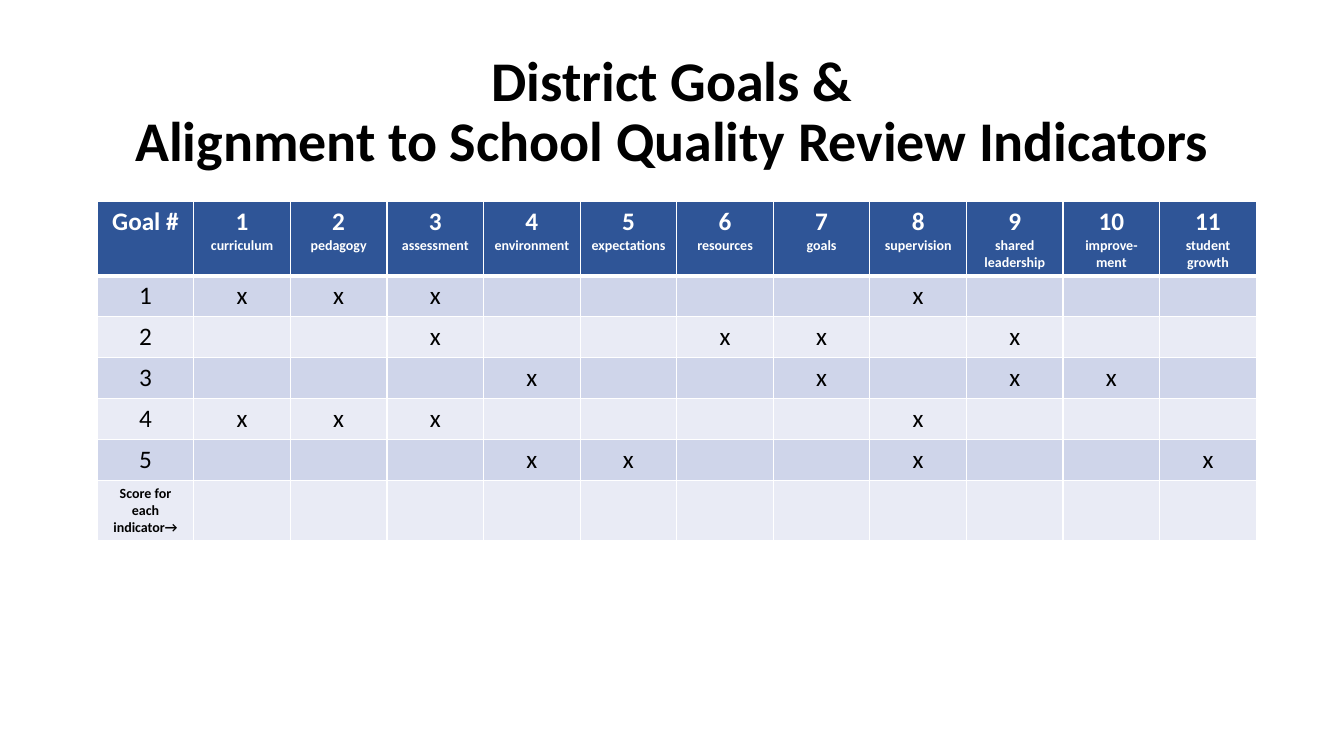
from pptx import Presentation
from pptx.dml.color import RGBColor
from pptx.enum.text import MSO_ANCHOR, PP_ALIGN
from pptx.oxml.ns import qn
from pptx.util import Pt
from lxml import etree

CENTER = PP_ALIGN.CENTER
MIDDLE = MSO_ANCHOR.MIDDLE
FONT = "Calibri"
COLORS = {
    "text": "000000",
    "white": "FFFFFF",
    "header": "2F5597",
    "band_dark": "CFD5EA",
    "band_light": "E9EBF5",
}
TITLE = "District Goals &\vAlignment to School Quality Review Indicators"
INDICATORS = [
    "curriculum", "pedagogy", "assessment", "environment", "expectations",
    "resources", "goals", "supervision", "shared leadership", "improve-ment",
    "student growth",
]
ALIGNED = {
    1: {1, 2, 3, 8},
    2: {3, 6, 7, 9},
    3: {4, 7, 9, 10},
    4: {1, 2, 3, 8},
    5: {4, 5, 8, 11},
}
SCORE_LABEL = "Score for each indicator→"
HEADER_HEIGHT, GOAL_HEIGHT, SCORE_HEIGHT = 53, 29.2, 43


def style_paragraph(paragraph, size, color, bold):
    """Centre a paragraph and format all of its runs."""
    paragraph.alignment = CENTER
    for run in paragraph.runs:
        run.font.color.rgb = RGBColor.from_string(COLORS[color])
        for attribute, value in {"name": FONT, "size": Pt(size), "bold": bold}.items():
            setattr(run.font, attribute, value)


def add_title(slide, left, top, width, height):
    """Place the two-line heading in the given box."""
    heading = slide.shapes.add_textbox(Pt(left), Pt(top), Pt(width), Pt(height))
    frame = heading.text_frame
    frame.word_wrap = True
    frame.vertical_anchor = MIDDLE
    frame.text = TITLE
    frame.paragraphs[0].line_spacing = 0.9
    style_paragraph(frame.paragraphs[0], 40, "text", True)


def style_cell(cell, fill, top_border, bottom_border):
    """Give a cell its white borders and its fill."""
    properties = cell._tc.get_or_add_tcPr()
    widths = {"a:lnL": 1, "a:lnR": 1, "a:lnT": top_border, "a:lnB": bottom_border}
    for side, width in widths.items():
        border = etree.SubElement(properties, qn(side), w=str(Pt(width)))
        paint = etree.SubElement(border, qn("a:solidFill"))
        etree.SubElement(paint, qn("a:srgbClr"), val=COLORS["white"])
    cell.fill.solid()
    cell.fill.fore_color.rgb = RGBColor.from_string(COLORS[fill])


def fill_cell(cell, lines, color):
    """Write (text, size, bold) lines into a cell."""
    cell.text = "\n".join(text for text, _, _ in lines)
    for paragraph, (_, size, bold) in zip(cell.text_frame.paragraphs, lines):
        style_paragraph(paragraph, size, color, bold)


def goal_rows():
    """Return the lines of every cell, row by row."""
    header = [[("Goal #", 18, True)]]
    header += [[(str(number), 18, True), (name, 10, True)]
               for number, name in enumerate(INDICATORS, 1)]
    rows = [header]
    for goal, marked in ALIGNED.items():
        marks = [[("x", 18, False)] if number in marked else []
                 for number in range(1, len(INDICATORS) + 1)]
        rows.append([[(str(goal), 18, False)]] + marks)
    rows.append([[(SCORE_LABEL, 10, True)]] + [[] for _ in INDICATORS])
    return rows


def add_alignment_table(slide, left, top, width):
    """Place the goal and indicator grid from the given corner."""
    rows = goal_rows()
    heights = [HEADER_HEIGHT] + [GOAL_HEIGHT] * len(ALIGNED) + [SCORE_HEIGHT]
    column_count = len(rows[0])
    grid = slide.shapes.add_table(
        len(rows), column_count, Pt(left), Pt(top), Pt(width), Pt(sum(heights))
    ).table
    for column in grid.columns:
        column.width = Pt(width / column_count)
    for row_index, (cells, height) in enumerate(zip(rows, heights)):
        grid.rows[row_index].height = Pt(height)
        is_header = row_index == 0
        band = "band_dark" if row_index % 2 else "band_light"
        for column_index, lines in enumerate(cells):
            cell = grid.cell(row_index, column_index)
            style_cell(cell, "header" if is_header else band,
                       3 if row_index == 1 else 1, 3 if is_header else 1)
            if lines:
                fill_cell(cell, lines, "white" if is_header else "text")


def main():
    """Build and save the slide."""
    presentation = Presentation()
    presentation.slide_width = Pt(960)
    presentation.slide_height = Pt(540)
    slide = presentation.slides.add_slide(presentation.slide_layouts[6])
    add_title(slide, 66, 28.75, 828, 104.4)
    add_alignment_table(slide, 69.4, 144, 828)
    presentation.save("out.pptx")


if __name__ == "__main__":
    main()
